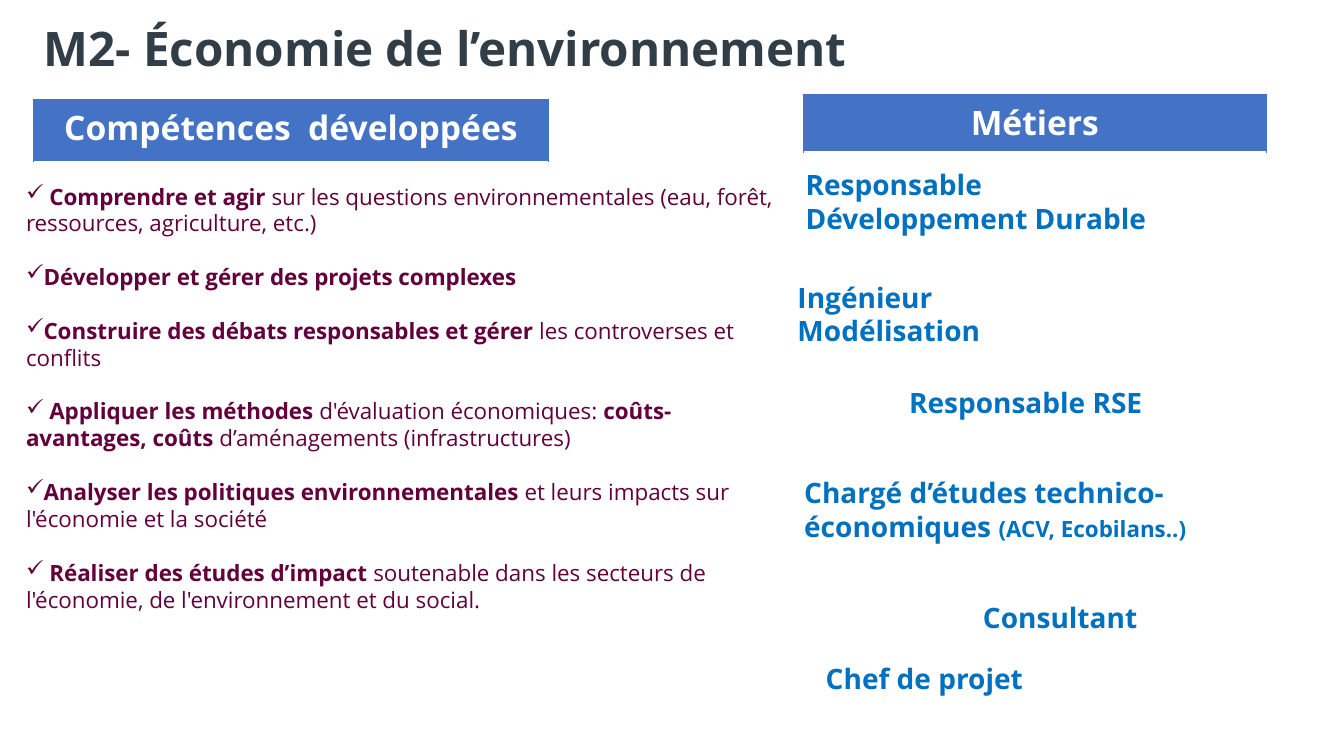
import pptx
import pptx.dml.color
import pptx.enum.text
import pptx.oxml
import pptx.oxml.ns
import pptx.util
from lxml import etree

GRID = 100
WIDTH, HEIGHT = pptx.util.Inches(13.33), pptx.util.Inches(7.5)
FONT = "Open Sans"
SLATE, PLUM, SKY, BLUE, WHITE = "313E48", "63003C", "0070C0", "4472C4", "FFFFFF"

SKILLS = [
    [(" Comprendre et agir", True),
     (" sur les questions environnementales (eau, forêt, ressources, agriculture, etc.)", False)],
    [("Développer et gérer des projets complexes", True)],
    [("Construire des débats responsables et gérer ", True),
     ("les controverses et conflits", False)],
    [(" Appliquer les méthodes ", True), ("d'évaluation économiques: ", False),
     ("coûts-avantages, coûts ", True), ("d’aménagements (infrastructures)", False)],
    [("Analyser les politiques environnementales ", True),
     ("et leurs impacts sur l'économie et la société", False)],
    [(" Réaliser des études d’impact ", True),
     ("soutenable dans les secteurs de l'économie, de l'environnement et du social.", False)],
]

JOBS = [
    ((59.2, 21.5, 28.4, 10.3), [("Responsable \vDéveloppement Durable", 20)]),
    ((58.6, 36.4, 20.9, 10.3), [("Ingénieur Modélisation", 20)]),
    ((66.9, 50.3, 21.5, 5.9), [("Responsable RSE", 20)]),
    ((59.1, 62.3, 30.9, 10.3),
     [("Chargé d’études technico-économiques ", 20), ("(ACV, Ecobilans..)", 16)]),
    ((72.4, 78.8, 14.3, 5.9), [("Consultant", 20)]),
    ((60.7, 86.9, 21.8, 5.9), [("Chef de projet", 20)]),
]


def color(value):
    """Turn a hex string into a colour."""
    return pptx.dml.color.RGBColor.from_string(value)


def place(box):
    """Turn grid columns and rows into slide lengths."""
    left, top, width, height = box
    return [int(share * side / GRID) for share, side in
            ((left, WIDTH), (top, HEIGHT), (width, WIDTH), (height, HEIGHT))]


def write(paragraph, text, size, ink, bold=True):
    """Add one formatted run of text; a vertical tab breaks the line."""
    for number, line in enumerate(text.split("\v")):
        if number:
            paragraph.add_line_break()
        run = paragraph.add_run()
        run.text = line
        for name, value in {"name": FONT, "size": pptx.util.Pt(size), "bold": bold}.items():
            setattr(run.font, name, value)
        run.font.color.rgb = color(ink)


def add_frame(slide, box):
    """Add a wrapping text box and return its text frame."""
    frame = slide.shapes.add_textbox(*place(box)).text_frame
    settings = {"word_wrap": True, "auto_size": pptx.enum.text.MSO_AUTO_SIZE.SHAPE_TO_FIT_TEXT}
    for name, value in settings.items():
        setattr(frame, name, value)
    return frame


def add_title(slide, box, text):
    """Move the title placeholder and write the title."""
    title = slide.shapes.title
    for name, value in zip(("left", "top", "width", "height"), place(box)):
        setattr(title, name, value)
    frame = title.text_frame
    frame.vertical_anchor = pptx.enum.text.MSO_ANCHOR.MIDDLE
    heading = frame.paragraphs[0]
    for name, value in {"alignment": pptx.enum.text.PP_ALIGN.LEFT, "line_spacing": 0.9}.items():
        setattr(heading, name, value)
    write(heading, text, 34, SLATE)


def add_banner(slide, box, text):
    """Add a one-cell table as a section heading."""
    table = slide.shapes.add_table(1, 1, *place(box)).table
    cell = table.cell(0, 0)
    cell.fill.solid()
    cell.fill.fore_color.rgb = color(BLUE)
    edges = {"lnL": (BLUE, 0.5), "lnR": (BLUE, 0.5), "lnT": (BLUE, 0.5), "lnB": (WHITE, 1)}
    properties = cell._tc.get_or_add_tcPr()
    for index, (edge, (ink, weight)) in enumerate(edges.items()):
        properties.insert(index, pptx.oxml.parse_xml(
            f'<a:{edge} {pptx.oxml.ns.nsdecls("a")} w="{pptx.util.Pt(weight)}"><a:solidFill>'
            f'<a:srgbClr val="{ink}"/></a:solidFill></a:{edge}>'))
    heading = cell.text_frame.paragraphs[0]
    heading.alignment = pptx.enum.text.PP_ALIGN.CENTER
    write(heading, text, 24, WHITE)


def add_skills(slide, box, skills):
    """Add the ticked list of skills."""
    frame = add_frame(slide, box)
    for index, skill in enumerate(skills):
        item = frame.add_paragraph() if index else frame.paragraphs[0]
        if index:
            item.space_before = pptx.util.Pt(19.2)
        properties = item._p.get_or_add_pPr()
        for name in ("marL", "indent"):
            properties.set(name, "0")
        tick = etree.SubElement(properties, pptx.oxml.ns.qn("a:buChar"))
        tick.set("char", "✓")
        for text, bold in skill:
            write(item, text, 16, PLUM, bold)


def add_jobs(slide, jobs):
    """Scatter the job names over the right column."""
    for box, parts in jobs:
        job = add_frame(slide, box).paragraphs[0]
        for text, size in parts:
            write(job, text, size, SKY)


def main():
    """Build and save the slide."""
    deck = pptx.Presentation()
    deck.slide_width, deck.slide_height = WIDTH, HEIGHT
    slide = deck.slides.add_slide(deck.slide_layouts[5])
    add_title(slide, (2.5, 0.7, 69.9, 12), "M2- Économie de l’environnement")
    add_skills(slide, (1.2, 23.5, 57.7, 62.4), SKILLS)
    add_jobs(slide, JOBS)
    add_banner(slide, (2.5, 13.1, 38.3, 8.3), "Compétences  développées")
    add_banner(slide, (59.8, 12.5, 34.4, 7.6), "Métiers")
    deck.save("out.pptx")


if __name__ == "__main__":
    main()
